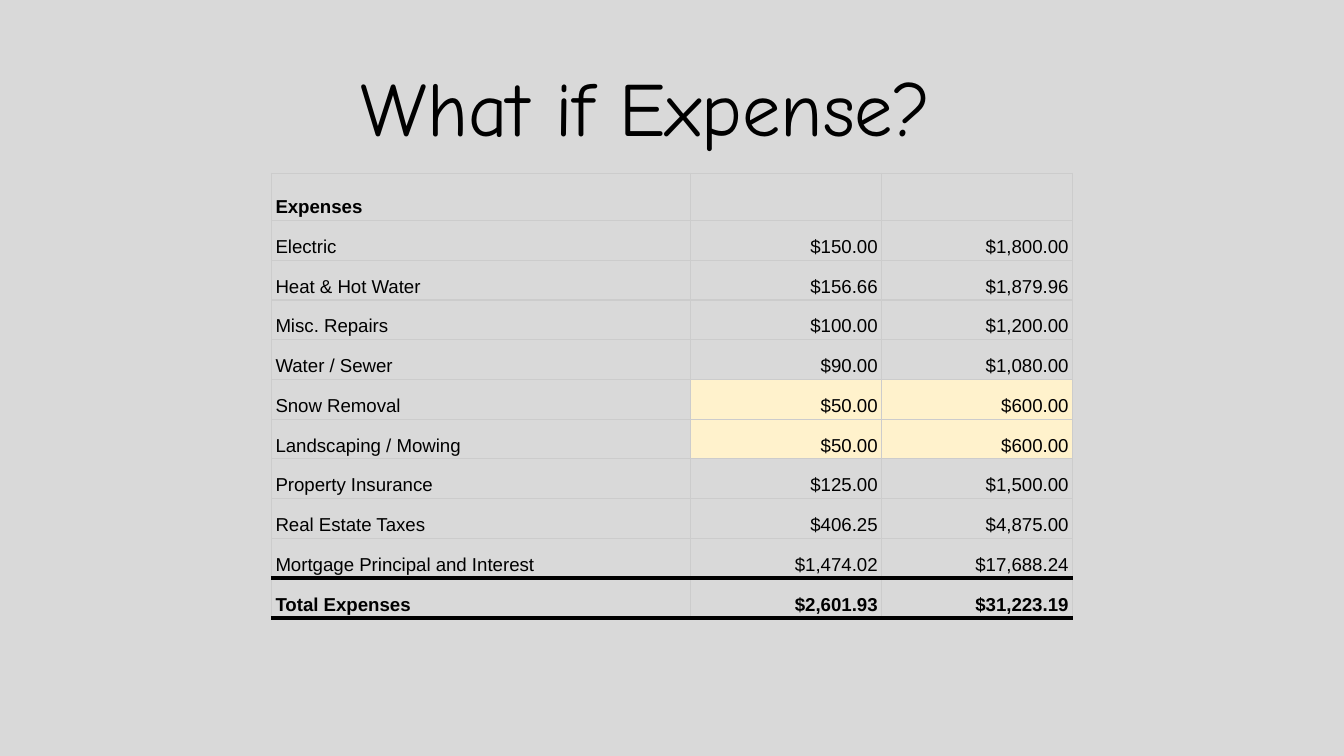
from dataclasses import dataclass

from lxml.etree import SubElement
from pptx import Presentation
from pptx.dml.color import RGBColor
from pptx.enum.text import MSO_ANCHOR as Anchor, PP_ALIGN as Align
from pptx.oxml.ns import qn
from pptx.util import Inches, Pt


@dataclass(frozen=True)
class Theme:
    background: str = "D9D9D9"
    ink: str = "000000"
    grid: str = "CCCCCC"
    highlight: str = "FFF2CC"
    title_font: str = "Comic Neue"
    body_font: str = "Arial"
    title_size: int = 41
    body_size: int = 10
    grid_width: float = 0.75
    rule_width: float = 2.25


THEME = Theme()

SLIDE_WIDTH = 10
SLIDE_HEIGHT = SLIDE_WIDTH * 9 / 16
EXPENSES = [
    ("Expenses", "", ""),
    ("Electric", "$150.00", "$1,800.00"),
    ("Heat & Hot Water", "$156.66", "$1,879.96"),
    ("Misc. Repairs", "$100.00", "$1,200.00"),
    ("Water / Sewer", "$90.00", "$1,080.00"),
    ("Snow Removal", "$50.00", "$600.00"),
    ("Landscaping / Mowing", "$50.00", "$600.00"),
    ("Property Insurance", "$125.00", "$1,500.00"),
    ("Real Estate Taxes", "$406.25", "$4,875.00"),
    ("Mortgage Principal and Interest", "$1,474.02", "$17,688.24"),
    ("Total Expenses", "$2,601.93", "$31,223.19"),
]
HIGHLIGHTED = {"Snow Removal", "Landscaping / Mowing"}
COLUMN_WIDTHS = (3.12, 1.42, 1.42)
HEADER_HEIGHT = 0.35
BODY_HEIGHT = 2.96


def apply(target, formats):
    for name, value in formats.items():
        setattr(target, name, value)


def write(para, text, font, size, bold=False):
    span = para.add_run()
    span.text = text
    apply(span.font, {"name": font, "size": Pt(size), "bold": bold})
    span.font.color.rgb = RGBColor.from_string(THEME.ink)


def add_title(page, text):
    box = page.shapes.add_textbox(Inches(0.97), Inches(0.35), Inches(7.87), Inches(1.14))
    sides = ("margin_left", "margin_top", "margin_right", "margin_bottom")
    apply(box.text_frame, {"word_wrap": True, **dict.fromkeys(sides, Inches(0.1))})
    para = box.text_frame.paragraphs[0]
    para.alignment = Align.CENTER
    write(para, text, THEME.title_font, THEME.title_size)


def set_border(cell, side, color, width):
    line = SubElement(cell._tc.get_or_add_tcPr(), qn(f"a:ln{side}"), w=str(Pt(width)))
    fill = SubElement(line, qn("a:solidFill"))
    SubElement(fill, qn("a:srgbClr"), val=color)


def format_cell(cell, heavy_sides, highlighted):
    apply(cell, {
        "vertical_anchor": Anchor.BOTTOM,
        "margin_left": Inches(0.03),
        "margin_right": Inches(0.03),
        "margin_top": Inches(0.02),
        "margin_bottom": Inches(0.02),
    })
    for side in "LRTB":
        if side in heavy_sides:
            set_border(cell, side, THEME.ink, THEME.rule_width)
        else:
            set_border(cell, side, THEME.grid, THEME.grid_width)
    if highlighted:
        cell.fill.solid()
        cell.fill.fore_color.rgb = RGBColor.from_string(THEME.highlight)
    else:
        cell.fill.background()


def add_expense_table(page):
    last = len(EXPENSES) - 1
    heavy_sides = {last - 1: "B", last: "TB"}
    frame = page.shapes.add_table(
        len(EXPENSES), len(COLUMN_WIDTHS), Inches(2.02), Inches(1.29),
        Inches(sum(COLUMN_WIDTHS)), Inches(HEADER_HEIGHT + BODY_HEIGHT))
    table = frame.table
    apply(table, {"first_row": False, "horz_banding": False})
    for column, width in zip(table.columns, COLUMN_WIDTHS):
        column.width = Inches(width)
    for r, values in enumerate(EXPENSES):
        table.rows[r].height = Inches(BODY_HEIGHT / last if r else HEADER_HEIGHT)
        for c, text in enumerate(values):
            cell = table.cell(r, c)
            format_cell(cell, heavy_sides.get(r, ""), c > 0 and values[0] in HIGHLIGHTED)
            if text:
                para = cell.text_frame.paragraphs[0]
                apply(para, {"alignment": Align.RIGHT if c else Align.LEFT, "line_spacing": 1.15})
                write(para, text, THEME.body_font, THEME.body_size, r in (0, last))


def main():
    deck = Presentation()
    apply(deck, {"slide_width": Inches(SLIDE_WIDTH), "slide_height": Inches(SLIDE_HEIGHT)})
    page = deck.slides.add_slide(deck.slide_layouts[6])
    page.background.fill.solid()
    page.background.fill.fore_color.rgb = RGBColor.from_string(THEME.background)
    add_title(page, "What if Expense? ")
    add_expense_table(page)
    deck.save("out.pptx")


if __name__ == "__main__":
    main()
